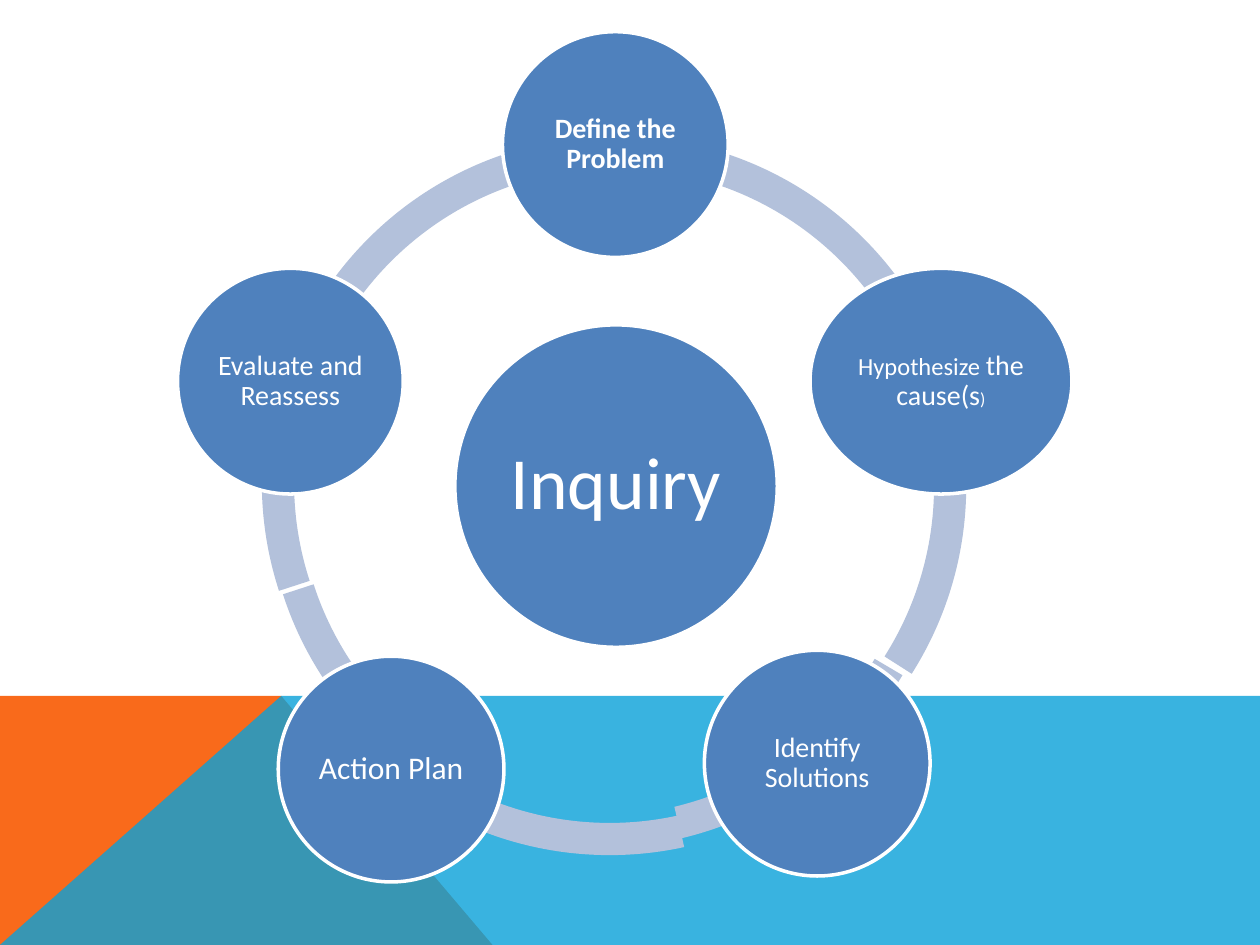
from lxml import etree
from pptx import Presentation
from pptx.dml.color import RGBColor
from pptx.enum import shapes, text
from pptx.oxml import ns
from pptx.util import Cm, Pt

COLORS = {"orange": "F96A1B", "sky": "08A1D9", "arc": "B3C1DB",
          "circle": "4F81BD", "white": "FFFFFF"}
FONT = "Calibri"

ARC_SIZE = 14.12
ARC_THICKNESS = 0.046
# left, top, start angle, end angle
ARCS = [
    (1.78, 2.1, 118.8, 162),
    (1.65, 2.48, 77.7, 120.76),
    (1.47, 2.33, 30.49, 76.6),
    (1.78, 2.1, 205.2, 32.4),
    (1.7, 2.03, 162, 205.2),
]

# left, top, width, height, inset, bold, runs of (words, points)
CIRCLES = [
    (5.59, 5.91, 6.5, 6.5, 0.15, False, [("Inquiry", 42)]),
    (6.55, 0, 4.55, 4.55, 0.05, True, [("Define the Problem", 16)]),
    (12.75, 4.77, 5.28, 4.55, 0.05, False,
     [("Hypothesize ", 14), ("the cause(s", 16), (")", 10)]),
    (10.62, 12.47, 4.55, 4.55, 0.05, False,
     [("Identify", 16), (" ", 11), ("Solutions", 16)]),
    (2.03, 12.59, 4.55, 4.55, 0.08, False, [("Action Plan", 18)]),
    (0, 4.77, 4.55, 4.55, 0.05, False, [("Evaluate and Reassess", 16)]),
]


def paint(shape, color, line_color=None):
    shape.shadow.inherit = False
    shape.fill.solid()
    shape.fill.fore_color.rgb = RGBColor.from_string(COLORS[color])
    if line_color:
        shape.line.color.rgb = RGBColor.from_string(COLORS[line_color])
        shape.line.width = Pt(2)
    else:
        shape.line.fill.background()


def add_polygon(slide, points, color):
    corners = [(Cm(x), Cm(y)) for x, y in points]
    builder = slide.shapes.build_freeform(*corners[0])
    builder.add_line_segments(corners[1:], close=True)
    shape = builder.convert_to_shape()
    paint(shape, color)
    return shape


def add_footer_band(slide, left, top, width, height):
    """Orange wedge under a translucent blue band, both peaking at one point."""
    right, bottom, peak = left + width, top + height, left + 5.67
    add_polygon(slide, [(left, bottom), (left, top), (peak, top),
                        (left + 9.93, bottom)], "orange")
    band = add_polygon(slide, [(left, bottom), (peak, top), (right, top),
                               (right, bottom)], "sky")
    color = band.fill._xPr.find(".//" + ns.qn("a:srgbClr"))
    etree.SubElement(color, ns.qn("a:alpha")).set("val", "80000")


def add_arc(slide, left, top, start, end):
    arc = slide.shapes.add_shape(shapes.MSO_SHAPE.BLOCK_ARC, Cm(left), Cm(top),
                                 Cm(ARC_SIZE), Cm(ARC_SIZE))
    # Angles are stored in 60000ths of a degree, adjustments in 100000ths.
    for index, value in enumerate((start * 0.6, end * 0.6, ARC_THICKNESS)):
        arc.adjustments[index] = value
    paint(arc, "arc")


def add_circle(slide, left, top, width, height, inset, bold, runs):
    circle = slide.shapes.add_shape(shapes.MSO_SHAPE.OVAL, Cm(left), Cm(top),
                                    Cm(width), Cm(height))
    paint(circle, "circle", "white")
    frame = circle.text_frame
    frame.word_wrap = True
    frame.vertical_anchor = text.MSO_ANCHOR.MIDDLE
    frame.margin_left = frame.margin_right = Cm(inset)
    frame.margin_top = frame.margin_bottom = Cm(inset)
    paragraph = frame.paragraphs[0]
    paragraph.alignment = text.PP_ALIGN.CENTER
    paragraph.line_spacing = 0.9
    for words, points in runs:
        run = paragraph.add_run()
        run.text = words
        run.font.name = FONT
        run.font.size = Pt(points)
        run.font.bold = bold
        run.font.color.rgb = RGBColor.from_string(COLORS["white"])


def add_cycle(slide, left, top):
    """Ring of arcs with the steps on it and the topic in the middle."""
    for x, y, *angles in ARCS:
        add_arc(slide, left + x, top + y, *angles)
    for x, y, *details in CIRCLES:
        add_circle(slide, left + x, top + y, *details)


def main():
    presentation = Presentation()
    presentation.slide_width = Cm(25.4)
    presentation.slide_height = Cm(19.05)
    slide = presentation.slides.add_slide(presentation.slide_layouts[6])
    add_footer_band(slide, 0, 14.03, 25.4, 5.02)
    add_cycle(slide, 3.58, 0.64)
    presentation.save("out.pptx")


if __name__ == "__main__":
    main()
